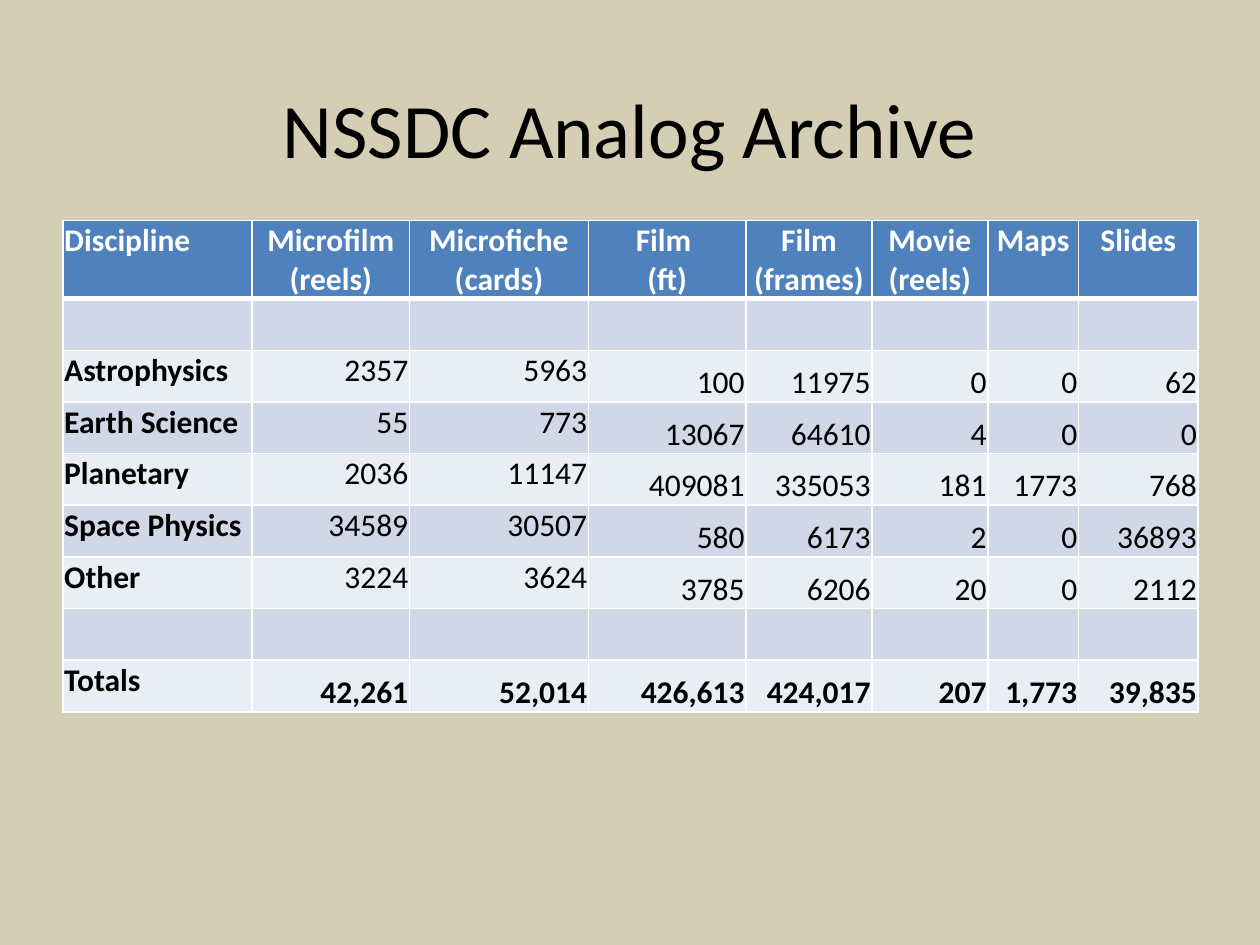
from lxml import etree
from pptx import Presentation
from pptx.dml.color import RGBColor
from pptx.enum.text import MSO_ANCHOR, PP_ALIGN
from pptx.oxml.ns import qn
from pptx.util import Inches, Pt

LEFT, CENTER, RIGHT = PP_ALIGN.LEFT, PP_ALIGN.CENTER, PP_ALIGN.RIGHT
TOP, MIDDLE, BOTTOM = MSO_ANCHOR.TOP, MSO_ANCHOR.MIDDLE, MSO_ANCHOR.BOTTOM
TITLE_ONLY = 5

COLUMN_WIDTHS = [1.5, 1.25, 1.42, 1.25, 1, 0.92, 0.72, 0.95]
HEADER_HEIGHT, ROW_HEIGHT = 0.62, 0.41
# "\n" starts a paragraph, "\v" breaks a line
HEADERS = ["Discipline", "Microfilm\n(reels)", "Microfiche\n(cards)", "Film \v(ft)",
           "Film (frames)", "Movie (reels)", "Maps", "Slides"]
BLANK = [""] * len(HEADERS)
ROWS = [
    HEADERS,
    BLANK,
    ["Astrophysics", "2357", "5963", "100", "11975", "0", "0", "62"],
    ["Earth Science", "55", "773", "13067", "64610", "4", "0", "0"],
    ["Planetary", "2036", "11147", "409081", "335053", "181", "1773", "768"],
    ["Space Physics", "34589", "30507", "580", "6173", "2", "0", "36893"],
    ["Other", "3224", "3624", "3785", "6206", "20", "0", "2112"],
    BLANK,
    ["Totals", "42,261", "52,014", "426,613", "424,017", "207", "1,773", "39,835"],
]


def rgb(value):
    return RGBColor.from_string(value)


def write(frame, text, size=18, color="000000", bold=False, align=LEFT, font="Calibri"):
    for index, line in enumerate(text.split("\n")):
        para = frame.paragraphs[0] if index == 0 else frame.add_paragraph()
        para.text = line
        para.alignment = align
        for span in para.runs:
            span.font.name = font
            span.font.size = Pt(size)
            span.font.bold = bold
            span.font.color.rgb = rgb(color)


def add_border(cell, side, color, width):
    line = etree.SubElement(cell._tc.get_or_add_tcPr(), qn(f"a:ln{side}"), w=str(Pt(width)))
    fill = etree.SubElement(line, qn("a:solidFill"))
    etree.SubElement(fill, qn("a:srgbClr"), val=color)


class ArchiveSlide:
    header_fill = "4F81BD"
    band_fills = ["E9EDF4", "D0D8E8"]
    border = "FFFFFF"

    def __init__(self, deck, background):
        self.page = deck.slides.add_slide(deck.slide_layouts[TITLE_ONLY])
        fill = self.page.background.fill
        fill.solid()
        fill.fore_color.rgb = rgb(background)

    def title(self, text, left, top, width, height):
        box = self.page.shapes.title
        box.left, box.top = Inches(left), Inches(top)
        box.width, box.height = Inches(width), Inches(height)
        box.text_frame.vertical_anchor = MIDDLE
        write(box.text_frame, text, size=44, align=CENTER)

    def table(self, rows, widths, left, top):
        height = HEADER_HEIGHT + ROW_HEIGHT * (len(rows) - 1)
        table = self.page.shapes.add_table(
            len(rows), len(widths), Inches(left), Inches(top),
            Inches(sum(widths)), Inches(height)).table
        for column, width in zip(table.columns, widths):
            column.width = Inches(width)
        for r, texts in enumerate(rows):
            table.rows[r].height = Inches(ROW_HEIGHT if r else HEADER_HEIGHT)
            for c, text in enumerate(texts):
                self.cell(table.cell(r, c), text, r, c, is_total=r == len(rows) - 1)

    def cell(self, cell, text, row, column, is_total):
        is_header = row == 0
        for side in "LRTB":
            add_border(cell, side, self.border, 3 if is_header and side == "B" else 1)
        cell.fill.solid()
        cell.fill.fore_color.rgb = rgb(self.header_fill if is_header else self.band_fills[row % 2])
        if not text:
            return
        cell.margin_left = cell.margin_right = cell.margin_top = Inches(0.01)
        cell.margin_bottom = 0
        sits_low = not is_header and (column > 2 or is_total and column > 0)
        cell.vertical_anchor = BOTTOM if sits_low else TOP
        write(cell.text_frame, text,
              color="FFFFFF" if is_header else "000000",
              bold=is_header or is_total or column == 0,
              align=LEFT if column == 0 else CENTER if is_header else RIGHT)


def main():
    deck = Presentation()
    deck.slide_width, deck.slide_height = Inches(10), Inches(7.5)
    slide = ArchiveSlide(deck, background="D4CFB4")
    slide.title("NSSDC Analog Archive", 0.5, 0.58, 9, 0.87)
    slide.table(ROWS, COLUMN_WIDTHS, 0.5, 1.75)
    deck.save("out.pptx")


if __name__ == "__main__":
    main()
